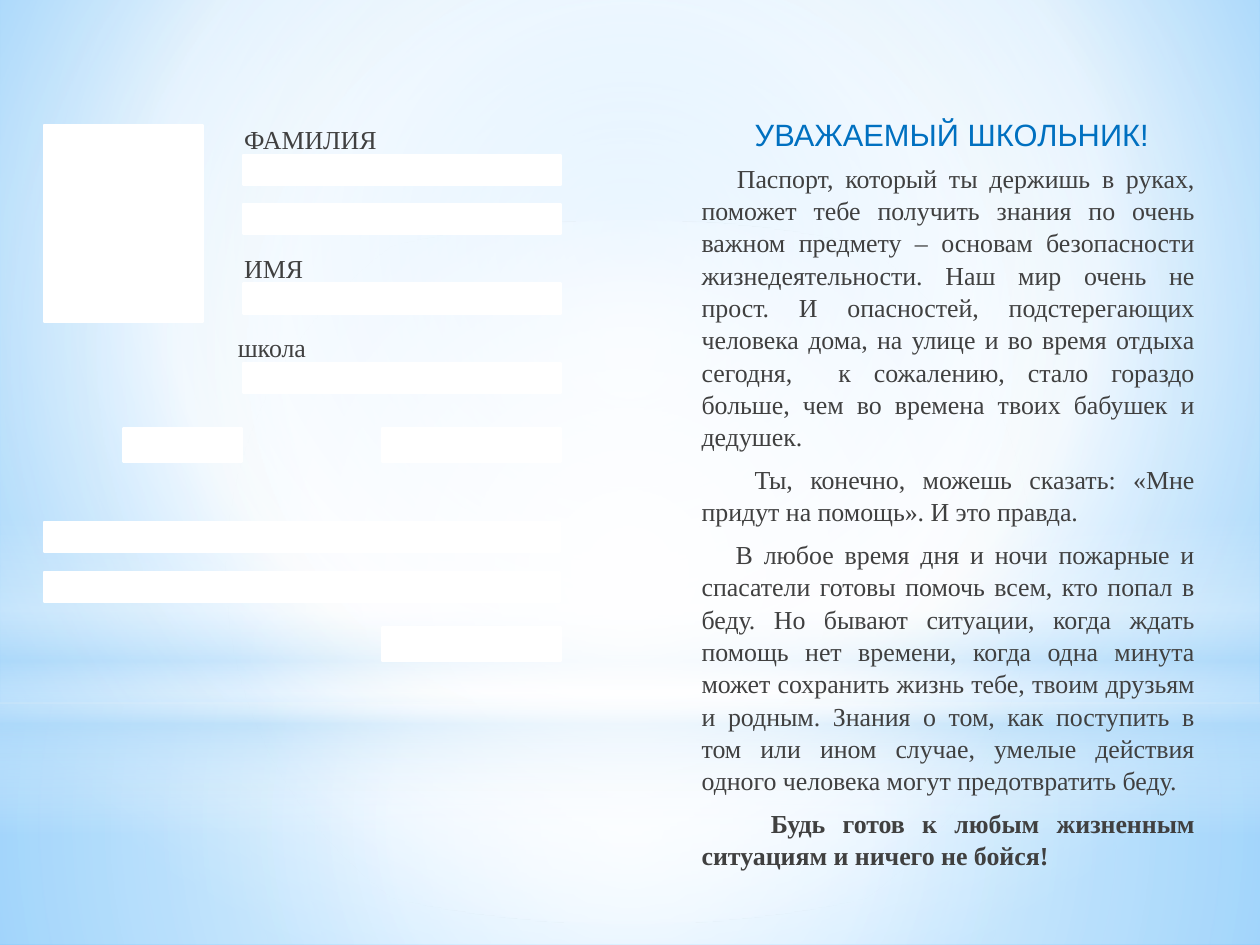
from lxml.etree import SubElement
from pptx import Presentation
from pptx.dml.color import RGBColor
from pptx.enum.shapes import MSO_SHAPE
from pptx.enum.text import MSO_ANCHOR, PP_ALIGN
from pptx.oxml.ns import qn
from pptx.util import Inches, Pt

WHITE = RGBColor(0xFF, 0xFF, 0xFF)
PALE_BLUE = RGBColor(0xB4, 0xDC, 0xFA)
SKY_BLUE = RGBColor(0x9E, 0xD5, 0xFF)
DEEP_SKY = RGBColor(0x5B, 0xB9, 0xFF)
TITLE_BLUE = RGBColor(0x00, 0x70, 0xC0)
DARK_GREY = RGBColor(0x40, 0x40, 0x40)

presentation = Presentation()
presentation.slide_width = Inches(10)
presentation.slide_height = Inches(7.5)
slide = presentation.slides.add_slide(presentation.slide_layouts[5])


def area(left, top, width, height):
    column, row = presentation.slide_width / 100, presentation.slide_height / 100
    return int(left * column), int(top * row), int(width * column), int(height * row)


def set_gradient(fill, owner, stops, focus):
    fill.gradient()
    gradient = owner.find(".//" + qn("a:gradFill"))
    gradient.clear()
    stop_list = SubElement(gradient, qn("a:gsLst"))
    for position, color, opacity in stops:
        stop = SubElement(stop_list, qn("a:gs"), pos=str(position * 1000))
        color_element = SubElement(stop, qn("a:srgbClr"), val=str(color))
        SubElement(color_element, qn("a:alpha"), val=str(opacity * 1000))
    if focus:
        circle = SubElement(gradient, qn("a:path"), path="circle")
        edges = {side: str(share * 1000) for side, share in zip("ltrb", focus)}
        SubElement(circle, qn("a:fillToRect"), **edges)
    else:
        SubElement(gradient, qn("a:lin"), ang="5400000", scaled="0")


set_gradient(slide.background.fill, slide._element,
             [(0, SKY_BLUE, 100), (60, WHITE, 100), (100, DEEP_SKY, 100)],
             (20, 10, 20, 60))

CENTER = (50, 50, 50, 50)
backdrops = [
    (MSO_SHAPE.RECTANGLE, (0, 74.4, 100, 25.6), CENTER,
     [(0, WHITE, 91), (37, WHITE, 76), (100, PALE_BLUE, 79)]),
    (MSO_SHAPE.RECTANGLE, (0, 0, 100, 74.4), CENTER,
     [(0, WHITE, 89), (48, WHITE, 62), (100, PALE_BLUE, 79)]),
    (MSO_SHAPE.RECTANGLE, (0, 54.9, 100, 33.3), None,
     [(0, WHITE, 0), (29, WHITE, 30), (45, PALE_BLUE, 40),
      (55, WHITE, 26), (65, PALE_BLUE, 60), (100, WHITE, 0)]),
    (MSO_SHAPE.OVAL, (0, 23.3, 100, 74.4), CENTER,
     [(0, WHITE, 100), (56, WHITE, 0)]),
]
for kind, place, focus, stops in backdrops:
    backdrop = slide.shapes.add_shape(kind, *area(*place))
    backdrop.shadow.inherit = False
    backdrop.line.fill.background()
    set_gradient(backdrop.fill, backdrop._element, stops, focus)

title = slide.shapes.title
slide.shapes._spTree.append(title._element)
title.left, title.top, title.width, title.height = area(53.1, 9.1, 44.9, 10.3)
title.text_frame.text = "УВАЖАЕМЫЙ ШКОЛЬНИК!"
title.text_frame.vertical_anchor = MSO_ANCHOR.MIDDLE
title_paragraph = title.text_frame.paragraphs[0]
title_paragraph.alignment = PP_ALIGN.CENTER
title_font = title_paragraph.runs[0].font
title_font.name = "Arial"
title_font.size = Pt(17.6)
title_font.color.rgb = TITLE_BLUE

FIELD_LEFT, FIELD_WIDTH, FIELD_HEIGHT = 19.3, 25.2, 3.2
SURNAME_ROW, NAME_ROW, SCHOOL_ROW = 16.4, 30, 38.4
LABEL_HEIGHT = 4.1

fields = [(3.5, 13.2, 12.6, 20.9)]
for row in (SURNAME_ROW, 21.6, NAME_ROW, SCHOOL_ROW):
    fields.append((FIELD_LEFT, row, FIELD_WIDTH, FIELD_HEIGHT))
for row in (55.2, 60.5):
    fields.append((3.5, row, 40.9, FIELD_HEIGHT))
for left, row, width in ((30.3, 45.3, 14.2), (9.8, 45.3, 9.4), (30.3, 66.4, 14.2)):
    fields.append((left, row, width, 3.6))
for place in fields:
    field = slide.shapes.add_shape(MSO_SHAPE.RECTANGLE, *area(*place))
    field.shadow.inherit = False
    field.fill.solid()
    field.fill.fore_color.rgb = WHITE
    field.line.color.rgb = WHITE
    field.line.width = Pt(1.25)

letter = [
    ("Паспорт, который ты держишь в руках, поможет тебе получить знания по очень "
     "важном предмету – основам безопасности жизнедеятельности. Наш мир очень не "
     "прост. И опасностей, подстерегающих человека дома, на улице и во время отдыха "
     "сегодня,  к сожалению, стало гораздо больше, чем во времена твоих бабушек и "
     "дедушек.", 2.8, False),
    ("Ты, конечно, можешь сказать: «Мне придут на помощь». И это правда.", 4.2, False),
    ("В любое время дня и ночи пожарные и спасатели готовы помочь всем, кто попал в "
     "беду. Но бывают ситуации, когда ждать помощь нет времени, когда одна минута "
     "может сохранить жизнь тебе, твоим друзьям и родным. Знания о том, как поступить "
     "в том или ином случае, умелые действия одного человека могут предотвратить "
     "беду.", 2.7, False),
    ("Будь готов к любым жизненным ситуациям и ничего не бойся!", 5.5, True),
]
text_blocks = [((54.7, 16.4, 41.1, 71.3), letter)]
for label, row, indent in (("ФАМИЛИЯ", SURNAME_ROW, 1.5), ("ИМЯ", NAME_ROW, 1.5),
                           ("школа", SCHOOL_ROW, 1)):
    place = (16.9, row - LABEL_HEIGHT, 15.7, LABEL_HEIGHT)
    text_blocks.append((place, [(label, indent, False)]))

for place, paragraphs in text_blocks:
    text_frame = slide.shapes.add_textbox(*area(*place)).text_frame
    text_frame.word_wrap = True
    text_frame.text = "\n".join(text for text, indent, bold in paragraphs)
    for paragraph, (text, indent, bold) in zip(text_frame.paragraphs, paragraphs):
        paragraph.alignment = PP_ALIGN.JUSTIFY
        paragraph.space_before = paragraph.space_after = Pt(3)
        paragraph.line_spacing = 1.04
        first_line = int(presentation.slide_width * indent / 100)
        paragraph._p.get_or_add_pPr().set("indent", str(first_line))
        font = paragraph.runs[0].font
        font.name = "Times New Roman"
        font.size = Pt(14.8)
        font.bold = bold
        font.color.rgb = DARK_GREY

presentation.save("out.pptx")
